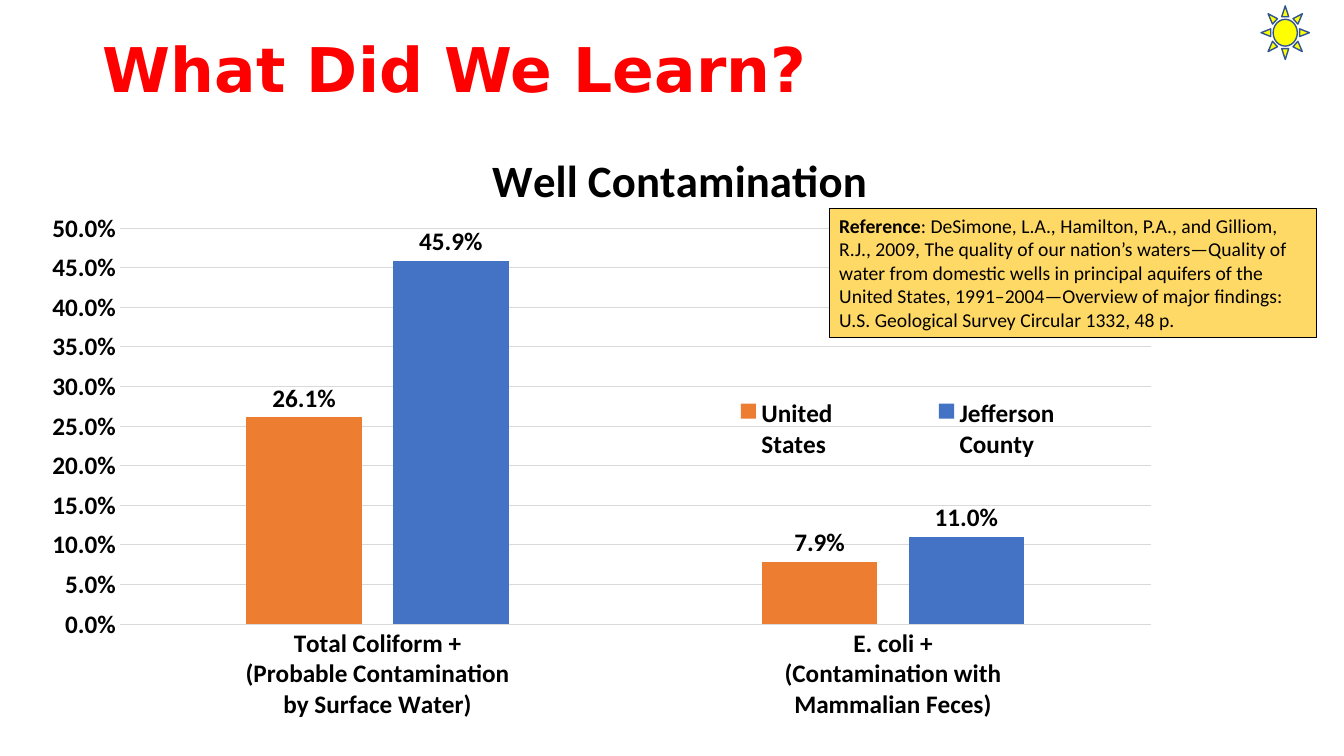
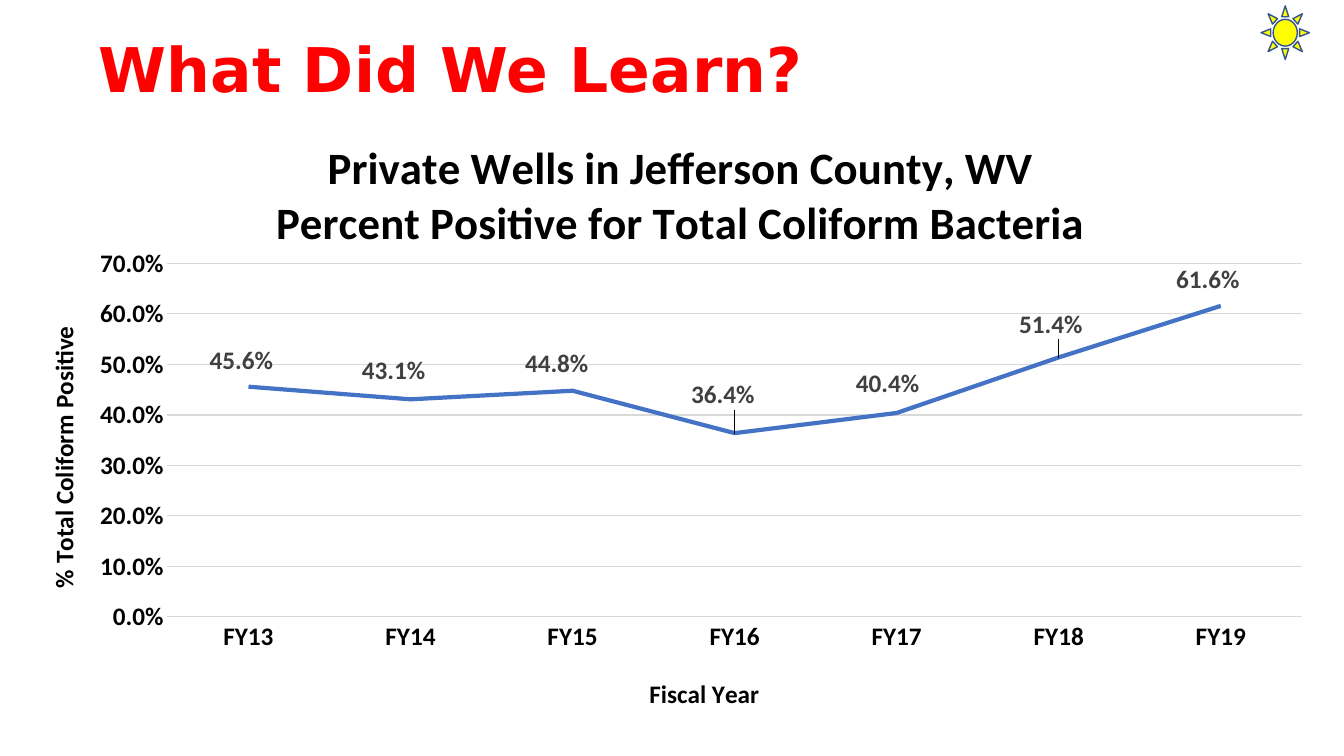
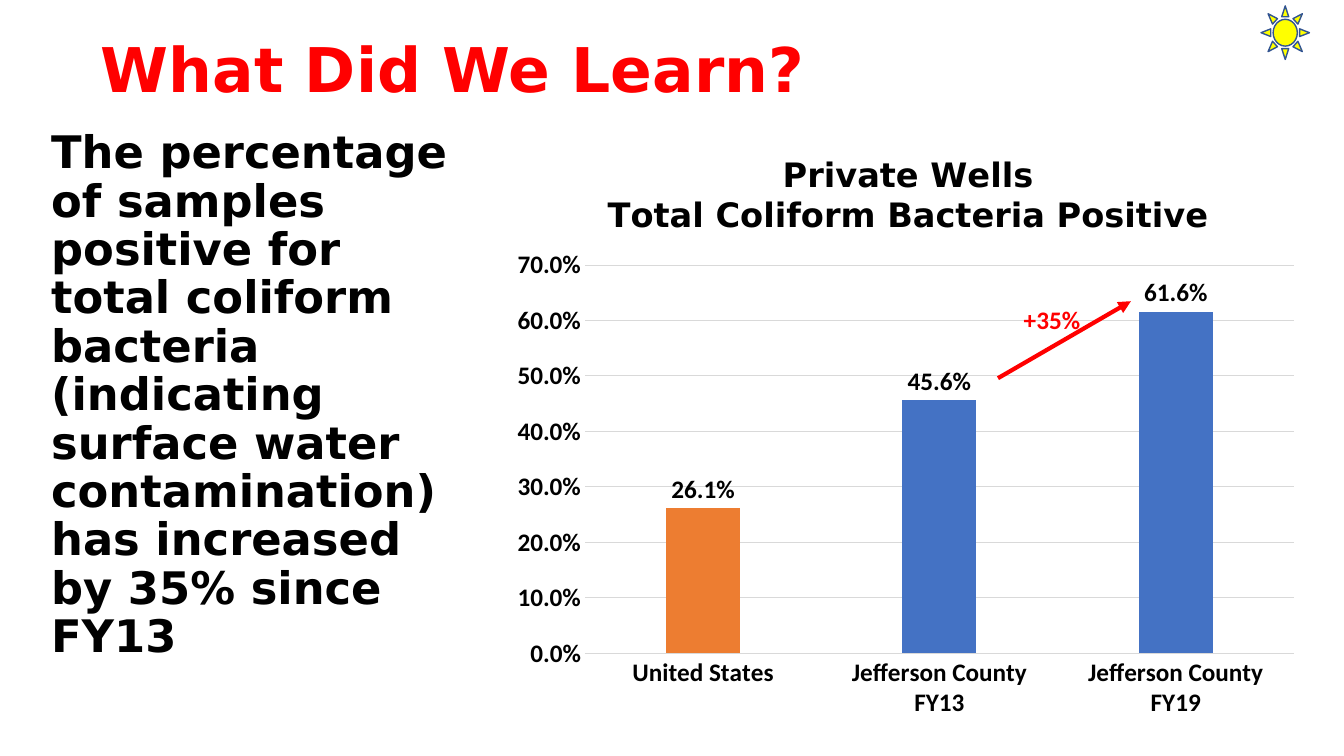
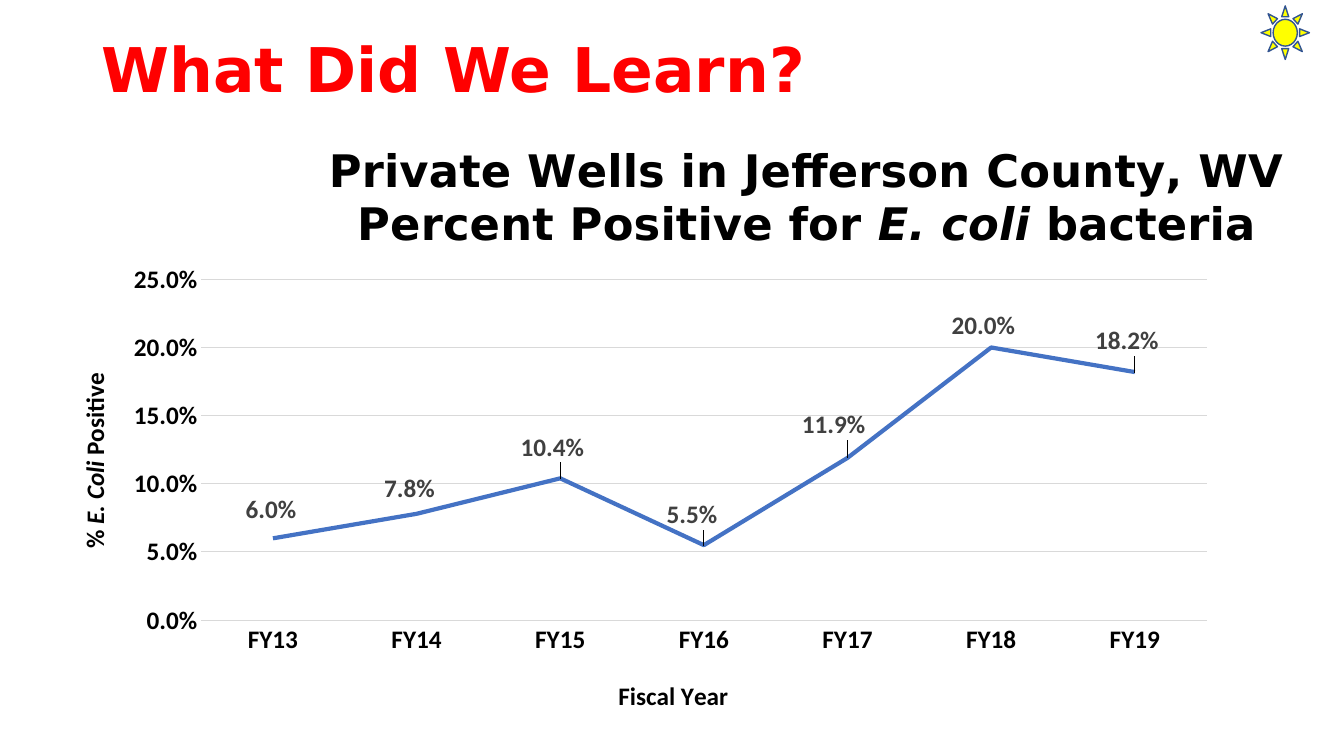
from lxml.etree import SubElement
from pptx import Presentation
from pptx.chart.data import CategoryChartData as ChartData
from pptx.dml.color import RGBColor
from pptx.enum.chart import XL_CHART_TYPE as ChartType
from pptx.enum.chart import XL_LABEL_POSITION as LabelPosition
from pptx.enum.chart import XL_LEGEND_POSITION as LegendPosition
from pptx.enum.chart import XL_TICK_MARK as TickMark
from pptx.enum.shapes import MSO_CONNECTOR as Connector
from pptx.enum.shapes import MSO_SHAPE as Shape
from pptx.enum.text import MSO_ANCHOR as Anchor
from pptx.enum.text import PP_ALIGN as Align
from pptx.oxml import parse_xml
from pptx.oxml.ns import nsdecls, qn
from pptx.util import Cm, Pt

RED, BLACK, GREY = "FF0000", "000000", "404040"
BLUE, ORANGE, GRID = "4472C4", "ED7D31", "D9D9D9"
YELLOW, SUN_EDGE, NOTE_FILL = "FFFF00", "325491", "FFD966"
BODY, DISPLAY = "Calibri", "DejaVu Sans"
PERCENT = "0.0%"
YEARS = [f"FY{year}" for year in range(13, 20)]


def color(value):
    return RGBColor.from_string(value)


def apply(target, **values):
    for name, value in values.items():
        setattr(target, name, value)


def style_font(font, size, shade=BLACK, name=BODY, **extra):
    apply(font, **{"size": Pt(size), "name": name, "bold": True, **extra})
    font.color.rgb = color(shade)


def style_line(line, shade, width):
    line.color.rgb = color(shade)
    line.width = Pt(width)


def write(frame, lines, size, shade=BLACK, name=BODY, align=Align.LEFT, spacing=None):
    for index, runs in enumerate(lines):
        paragraph = frame.add_paragraph() if index else frame.paragraphs[0]
        apply(paragraph, alignment=align, line_spacing=spacing)
        for text, extra in runs:
            run = paragraph.add_run()
            run.text = text
            style_font(run.font, size, shade, name, **extra)


def plain(*texts):
    return [[(text, {})] for text in texts]


def add_text(slide, box, lines, size, anchor=Anchor.TOP, **style):
    shape = slide.shapes.add_textbox(*map(Cm, box))
    apply(shape.text_frame, word_wrap=True, vertical_anchor=anchor)
    write(shape.text_frame, lines, size, **style)


def add_filled(slide, kind, box, fill, edge, width):
    shape = slide.shapes.add_shape(kind, *map(Cm, box))
    shape.shadow.inherit = False
    shape.fill.solid()
    shape.fill.fore_color.rgb = color(fill)
    style_line(shape.line, edge, width)
    return shape


def add_note(slide, box, lines):
    shape = add_filled(slide, Shape.RECTANGLE, box, NOTE_FILL, BLACK, 0.75)
    apply(shape.text_frame, word_wrap=True, vertical_anchor=Anchor.TOP)
    write(shape.text_frame, lines, 14)


def add_arrow(slide, start, end):
    arrow = slide.shapes.add_connector(Connector.STRAIGHT, *map(Cm, start + end))
    style_line(arrow.line, RED, 3)
    SubElement(arrow.line._get_or_add_ln(), qn("a:tailEnd"), type="triangle")
    SubElement(arrow._element.spPr, qn("a:effectLst"))


def new_slide(presentation, title_left):
    slide = presentation.slides.add_slide(presentation.slide_layouts[6])
    add_text(slide, (title_left, 0, 29.21, 3.68), plain("What Did We Learn?"), 44,
             Anchor.MIDDLE, shade=RED, name=DISPLAY, spacing=0.9)
    add_filled(slide, Shape.SUN, (31.78, 0.15, 1.22, 1.35), YELLOW, SUN_EDGE, 1)
    return slide


def set_layout(element, box, chart_box, index=1, modes=("xMode", "yMode"), target=""):
    for old in element.findall(qn("c:layout")):
        element.remove(old)
    layout = parse_xml(f"<c:layout {nsdecls('c')}><c:manualLayout/></c:layout>")
    parts = [("layoutTarget", target)] if target else []
    parts += [(mode, "edge") for mode in modes]
    parts += [(name, str(length / whole))
              for name, length, whole in zip("xywh", box, chart_box[2:] * 2)]
    for name, value in parts:
        SubElement(layout[0], qn(f"c:{name}"), val=value)
    element.insert(index, layout)


def style_axes(chart, top, step):
    values, categories = chart.value_axis, chart.category_axis
    for axis in (values, categories):
        apply(axis, major_tick_mark=TickMark.NONE, minor_tick_mark=TickMark.NONE)
        style_font(axis.tick_labels.font, 18)
    apply(values, minimum_scale=0, maximum_scale=top, major_unit=step,
          has_major_gridlines=True)
    apply(values.tick_labels, number_format=PERCENT, number_format_is_linked=False)
    style_line(values.major_gridlines.format.line, GRID, 0.75)
    style_line(categories.format.line, GRID, 0.75)
    values.format.line.fill.background()


def add_chart(slide, kind, box, plot_box, categories, series, scale,
              title, title_at, title_size=32, title_font=BODY):
    data = ChartData(number_format=PERCENT)
    data.categories = categories
    for name, values in series:
        data.add_series(name, values)
    chart = slide.shapes.add_chart(kind, *map(Cm, box), data).chart
    apply(chart, has_legend=False, has_title=True)
    style_font(chart.font, 10, bold=False)
    write(chart.chart_title.text_frame, title, title_size, name=title_font,
          align=Align.CENTER)
    style_axes(chart, *scale)
    chart.plots[0].vary_by_categories = False
    set_layout(chart.element.xpath("c:chart/c:title")[0], title_at, box)
    set_layout(chart.element.xpath(".//c:plotArea")[0], plot_box, box, 0,
               ("xMode", "yMode", "wMode", "hMode")[:2], "inner")
    return chart


def label_series(series, shade, position):
    labels = series.data_labels
    apply(labels, show_value=True, number_format=PERCENT,
          number_format_is_linked=False, position=position)
    style_font(labels.font, 18, shade)


def add_columns(slide, colors, *args, **kwargs):
    chart = add_chart(slide, ChartType.COLUMN_CLUSTERED, *args, **kwargs)
    apply(chart.plots[0], gap_width=219, overlap=-27)
    for series, shade in zip(chart.plots[0].series, colors):
        series.format.fill.solid()
        series.format.fill.fore_color.rgb = color(shade)
        label_series(series, BLACK, LabelPosition.OUTSIDE_END)
    return chart


def add_trend(slide, box, plot_box, values, scale, title, title_at, axis_title,
              axis_title_at, year_title_at, offsets, **style):
    chart = add_chart(slide, ChartType.LINE, box, plot_box, YEARS,
                      [("Series 1", values)], scale, title, title_at, **style)
    series = chart.plots[0].series[0]
    series.smooth = False
    style_line(series.format.line, BLUE, 3)
    label_series(series, GREY, LabelPosition.ABOVE)
    for index, offset in enumerate(offsets):
        label = series.points[index].data_label
        style_font(label.font, 18, GREY)
        label.position = LabelPosition.ABOVE
        element = chart.element.xpath(f".//c:dLbl[c:idx/@val='{index}']")[0]
        set_layout(element, offset, box, modes=())
    for axis, tag, lines, place in (
            (chart.value_axis, "valAx", axis_title, axis_title_at),
            (chart.category_axis, "catAx", plain("Fiscal Year"), year_title_at)):
        write(axis.axis_title.text_frame, lines, 18, align=Align.CENTER)
        set_layout(chart.element.xpath(f".//c:{tag}/c:title")[0], place, box)
    body = chart.element.xpath(".//c:valAx/c:title//a:bodyPr")[0]
    body.set("rot", "-5400000")
    body.set("vert", "horz")


def contamination_slide(presentation):
    slide = new_slide(presentation, 2.34)
    box = (0.66, 2.97, 32.54, 15.47)
    chart = add_columns(
        slide, (ORANGE, BLUE), box, (2.36, 2.78, 25.98, 9.98),
        ["Total Coliform +\n(Probable Contamination\nby Surface Water)",
         "E. coli +\n(Contamination with\nMammalian Feces)"],
        [("United\nStates", (0.261, 0.079)), ("Jefferson\nCounty", (0.459, 0.11))],
        (0.5, 0.05), plain("Well Contamination"), (11.54, 0.58))
    chart.has_legend = True
    apply(chart.legend, position=LegendPosition.RIGHT, include_in_layout=False)
    style_font(chart.legend.font, 18)
    set_layout(chart.element.xpath(".//c:legend")[0], (15.54, 6.64, 12.85, 2.4), box)
    add_note(slide, (20.9, 5.26, 12.29, 3.25), [[
        ("Reference", {}),
        (": DeSimone, L.A., Hamilton, P.A., and Gilliom, R.J., 2009, The quality of our "
         "nation’s waters—Quality of water from domestic wells in principal aquifers of "
         "the United States, 1991–2004—Overview of major findings: U.S. Geological "
         "Survey Circular 1332, 48 p.", {"bold": False})]])


def coliform_trend_slide(presentation):
    add_trend(
        new_slide(presentation, 2.24),
        (0.71, 3.02, 32.49, 15.47), (3.51, 3.62, 28.59, 8.91),
        (0.456, 0.431, 0.448, 0.364, 0.404, 0.514, 0.616), (0.7, 0.1),
        plain("Private Wells in Jefferson County, WV",
              "Percent Positive for Total Coliform Bacteria"), (6.17, 0.41),
        plain("% Total Coliform Positive"), (0.34, 5.09), (15.54, 13.91),
        [(-0.18, -0.18), (-0.43, -0.23), (-0.4, -0.2), (-0.3, -0.48),
         (-0.23, -0.25), (-0.2, -0.35), (-0.33, -0.18)])


def increase_slide(presentation):
    slide = new_slide(presentation, 2.29)
    add_text(slide, (1.04, 3.15, 10.97, 15.06), plain(
        "The percentage of samples positive for total coliform bacteria (indicating "
        "surface water contamination) has increased by 35% since FY13"),
        32, name=DISPLAY, spacing=0.9)
    chart = add_columns(
        slide, (BLUE,), (12.62, 3.28, 20.4, 15.11), (2.12, 3.4, 17.87, 9.78),
        ["United States", "Jefferson County\nFY13", "Jefferson County\nFY19"],
        [("Series 1", (0.261, 0.456, 0.616))], (0.7, 0.1),
        plain("Private Wells", "Total Coliform Bacteria Positive"), (2.62, 0.52),
        title_size=24, title_font=DISPLAY)
    national = chart.plots[0].series[0].points[0].format.fill
    national.solid()
    national.fore_color.rgb = color(ORANGE)
    add_arrow(slide, (25.15, 9.53), (28.5, 7.59))
    add_text(slide, (25.55, 7.54, 2.03, 1.02), plain("+35%"), 18, shade=RED)


def e_coli_trend_slide(presentation):
    italic = {"italic": True}
    add_trend(
        new_slide(presentation, 2.31),
        (1.02, 3.23, 31.67, 15.62), (4.05, 3.81, 25.34, 8.59),
        (0.06, 0.078, 0.104, 0.055, 0.119, 0.2, 0.182), (0.25, 0.05),
        plain("Private Wells in Jefferson County, WV") + [
            [("Percent Positive for ", {}), ("E. coli", italic), (" bacteria", {})]],
        (7.19, 0.32),
        [[("% ", {}), ("E. Coli", italic), (" Positive", {})]],
        (0.87, 6.09), (14.45, 13.75),
        [(-0.05, -0.23), (-0.18, -0.15), (-0.2, -0.3), (-0.3, -0.28),
         (-0.35, -0.35), (-0.2, -0.08), (-0.2, -0.3)],
        title_font=DISPLAY)


def main():
    presentation = Presentation()
    apply(presentation, slide_width=Cm(33.87), slide_height=Cm(19.05))
    for build in (contamination_slide, coliform_trend_slide,
                  increase_slide, e_coli_trend_slide):
        build(presentation)
    presentation.save("out.pptx")


if __name__ == "__main__":
    main()
